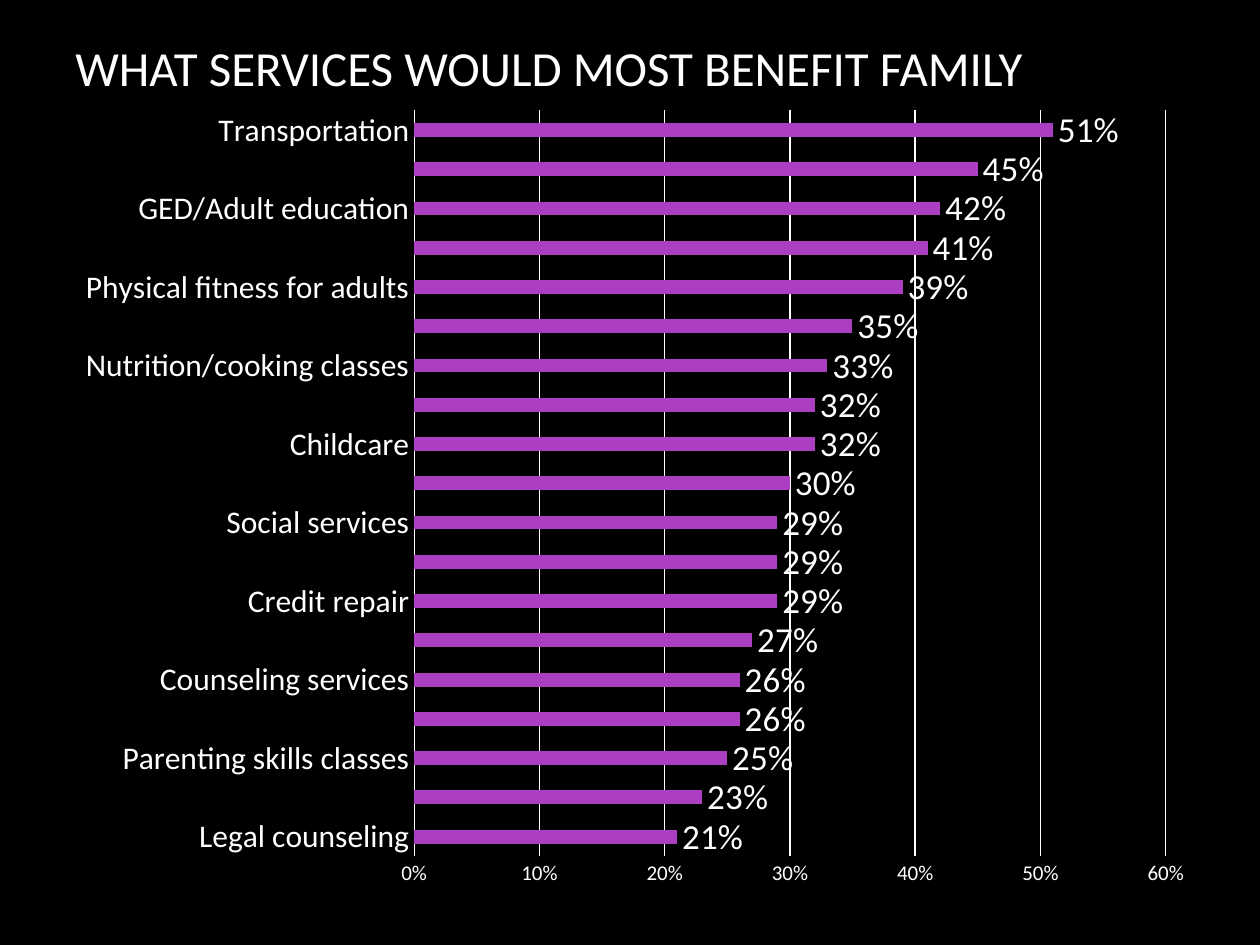
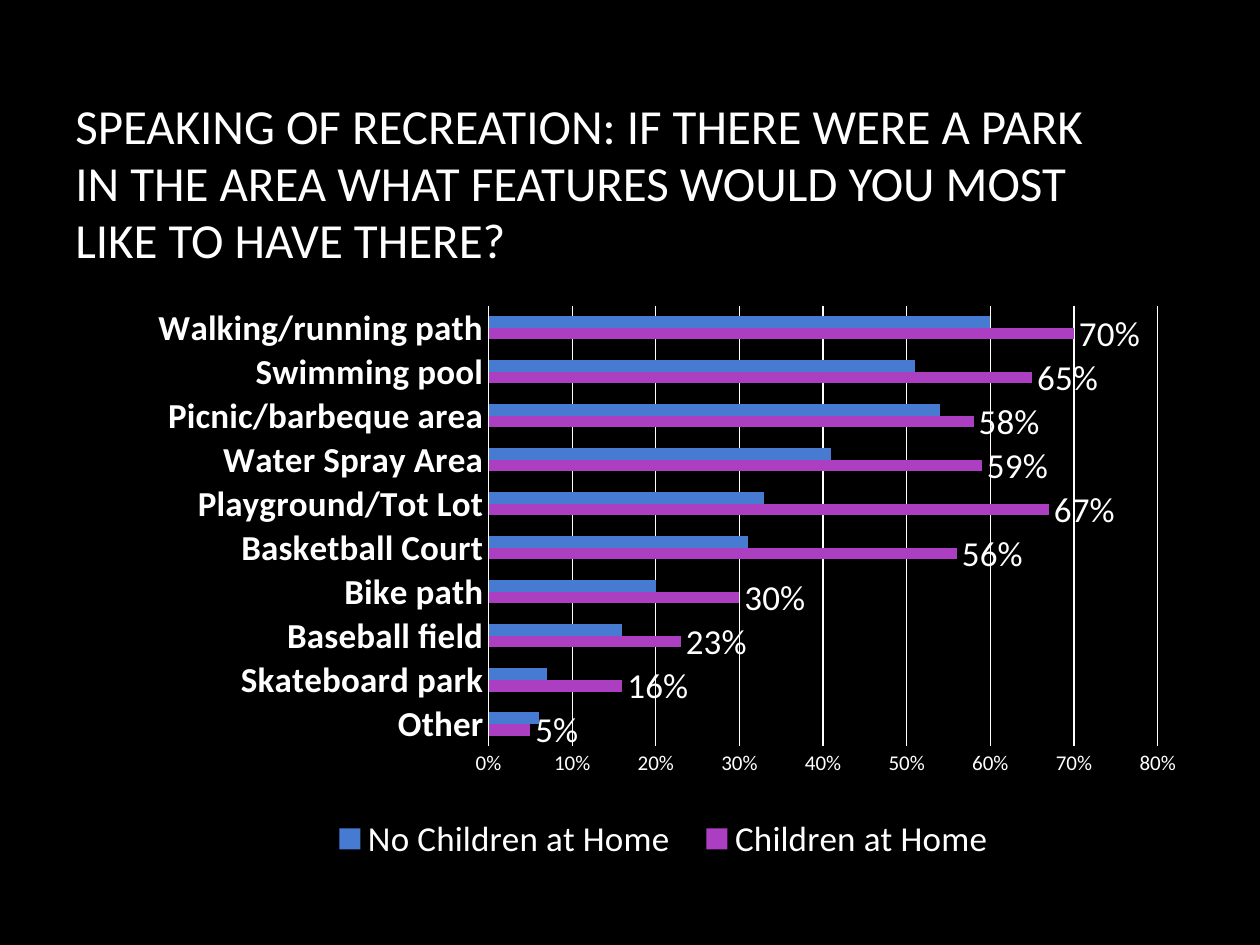
"""Build two survey result slides, each with a title and a bar chart."""
import dataclasses

import pptx
import pptx.chart.data
import pptx.dml.color
import pptx.enum.chart
import pptx.enum.text
import pptx.oxml
import pptx.oxml.ns
import pptx.util

Cm = pptx.util.Cm
Pt = pptx.util.Pt
color = pptx.dml.color.RGBColor.from_string


@dataclasses.dataclass(frozen=True)
class Theme:
    font: str = "Calibri"
    background: str = "000000"
    ink: str = "FFFFFF"
    purple: str = "AC3EC1"
    blue: str = "477BD1"
    title_size: int = 28
    label_size: int = 20
    value_axis_size: int = 12
    base_size: int = 10
    rule_width: float = 0.75


theme = Theme()


def add_text(page, text, *, left, top, width, height, size, ink, spacing):
    box = page.shapes.add_textbox(Cm(left), Cm(top), Cm(width), Cm(height))
    frame = box.text_frame
    frame.word_wrap = True
    frame.vertical_anchor = pptx.enum.text.MSO_ANCHOR.MIDDLE
    para = frame.paragraphs[0]
    para.line_spacing = spacing
    span = para.add_run()
    span.text = text
    span.font.name = theme.font
    span.font.size = Pt(size)
    span.font.color.rgb = color(ink)


def set_layout(parent, position, bounds, target=""):
    for old in parent.findall(pptx.oxml.ns.qn("c:layout")):
        parent.remove(old)
    modes = '<c:xMode val="edge"/><c:yMode val="edge"/>'
    sizes = "".join(f'<c:{key} val="{value}"/>' for key, value in zip("xywh", bounds))
    parent.insert(position, pptx.oxml.parse_xml(
        f'<c:layout {pptx.oxml.ns.nsdecls("c")}><c:manualLayout>'
        f"{target}{modes}{sizes}</c:manualLayout></c:layout>"))


slides = [
    {
        "title": "WHAT SERVICES WOULD MOST BENEFIT FAMILY",
        "title_top": 0.05, "title_height": 2.69,
        "chart_top": 1.9, "chart_height": 16.31,
        "plot": (0.307, 0.02, 0.657, 0.922),
        "maximum": 0.6, "format": "###0%",
        "category_size": 18, "category_bold": False,
        "categories": [
            "Legal counseling", "Financial Counseling", "Parenting skills classes",
            "Healthcare/medical services", "Counseling services", "Community garden",
            "Credit repair", "Arts/Dance/Music", "Social services",
            "Mental health services", "Childcare", "Social events",
            "Nutrition/cooking classes", "Computer classes/lab",
            "Physical fitness for adults", "Job skills training/employment assistance",
            "GED/Adult education", "Youth programs", "Transportation"],
        "series": {
            "Series 1": [0.21, 0.23, 0.25, 0.26, 0.26, 0.27, 0.29, 0.29, 0.29, 0.3,
                         0.32, 0.32, 0.33, 0.35, 0.39, 0.41, 0.42, 0.45, 0.51]},
        "legend": None,
    },
    {
        "title": "SPEAKING OF RECREATION: IF THERE WERE A PARK IN THE AREA "
                 "WHAT FEATURES WOULD YOU MOST LIKE TO HAVE THERE?",
        "title_top": 1.7, "title_height": 4.04,
        "chart_top": 5.69, "chart_height": 12.47,
        "plot": (0.372, 0.038, 0.585, 0.712),
        "maximum": 0.8, "format": "0%",
        "category_size": 20, "category_bold": True,
        "categories": [
            "Other", "Skateboard park", "Baseball field", "Bike path",
            "Basketball Court", "Playground/Tot Lot", "Water Spray Area",
            "Picnic/barbeque area", "Swimming pool", "Walking/running path"],
        "series": {
            "Children at Home":
                [0.05, 0.16, 0.23, 0.3, 0.56, 0.67, 0.59, 0.58, 0.65, 0.7],
            "No Children at Home":
                [0.06, 0.07, 0.16, 0.2, 0.31, 0.33, 0.41, 0.54, 0.51, 0.6]},
        "legend": (0.22, 0.85, 0.61, 0.1),
    },
]

deck = pptx.Presentation()
deck.slide_width = Cm(25.4)
deck.slide_height = Cm(19.05)

for content in slides:
    page = deck.slides.add_slide(deck.slide_layouts[6])
    page.background.fill.solid()
    page.background.fill.fore_color.rgb = color(theme.background)
    add_text(page, content["title"], left=1.27, top=content["title_top"],
             width=21.59, height=content["title_height"],
             size=theme.title_size, ink=theme.ink, spacing=0.97)

    data = pptx.chart.data.CategoryChartData(number_format=content["format"])
    data.categories = content["categories"]
    for name, values in content["series"].items():
        data.add_series(name, values)
    chart = page.shapes.add_chart(
        pptx.enum.chart.XL_CHART_TYPE.BAR_CLUSTERED, Cm(1.27), Cm(content["chart_top"]),
        Cm(23.06), Cm(content["chart_height"]), data).chart
    chart.has_title = False
    fonts = [(chart.font, theme.base_size)]

    plot = chart.plots[0]
    plot.gap_width = 182
    plot.vary_by_categories = False
    for series, fill in zip(plot.series, (theme.purple, theme.blue)):
        series.format.fill.solid()
        series.format.fill.fore_color.rgb = color(fill)
    labels = plot.series[0].data_labels
    labels.show_value = True
    labels.number_format = content["format"]
    labels.number_format_is_linked = False
    labels.position = pptx.enum.chart.XL_LABEL_POSITION.OUTSIDE_END
    fonts.append((labels.font, theme.label_size))

    category_axis, value_axis = chart.category_axis, chart.value_axis
    for axis in (category_axis, value_axis):
        axis.major_tick_mark = pptx.enum.chart.XL_TICK_MARK.NONE
        axis.minor_tick_mark = pptx.enum.chart.XL_TICK_MARK.NONE
    category_axis.has_major_gridlines = False
    category_axis.tick_labels.font.bold = content["category_bold"]
    value_axis.minimum_scale = 0
    value_axis.maximum_scale = content["maximum"]
    value_axis.major_unit = 0.1
    value_axis.has_major_gridlines = True
    value_axis.format.line.fill.background()
    value_axis.tick_labels.number_format = content["format"]
    value_axis.tick_labels.number_format_is_linked = False
    for line in (category_axis.format.line, value_axis.major_gridlines.format.line):
        line.color.rgb = color(theme.ink)
        line.width = Pt(theme.rule_width)
    fonts.append((category_axis.tick_labels.font, content["category_size"]))
    fonts.append((value_axis.tick_labels.font, theme.value_axis_size))

    set_layout(chart._chartSpace.chart.plotArea, 0, content["plot"],
               '<c:layoutTarget val="inner"/>')
    chart.has_legend = content["legend"] is not None
    if chart.has_legend:
        legend = chart.legend
        legend.position = pptx.enum.chart.XL_LEGEND_POSITION.BOTTOM
        legend.include_in_layout = False
        set_layout(legend._element, 1, content["legend"])
        fonts.append((legend.font, theme.label_size))

    for font, size in fonts:
        font.name = theme.font
        font.size = Pt(size)
        font.color.rgb = color(theme.ink)

deck.save("out.pptx")
